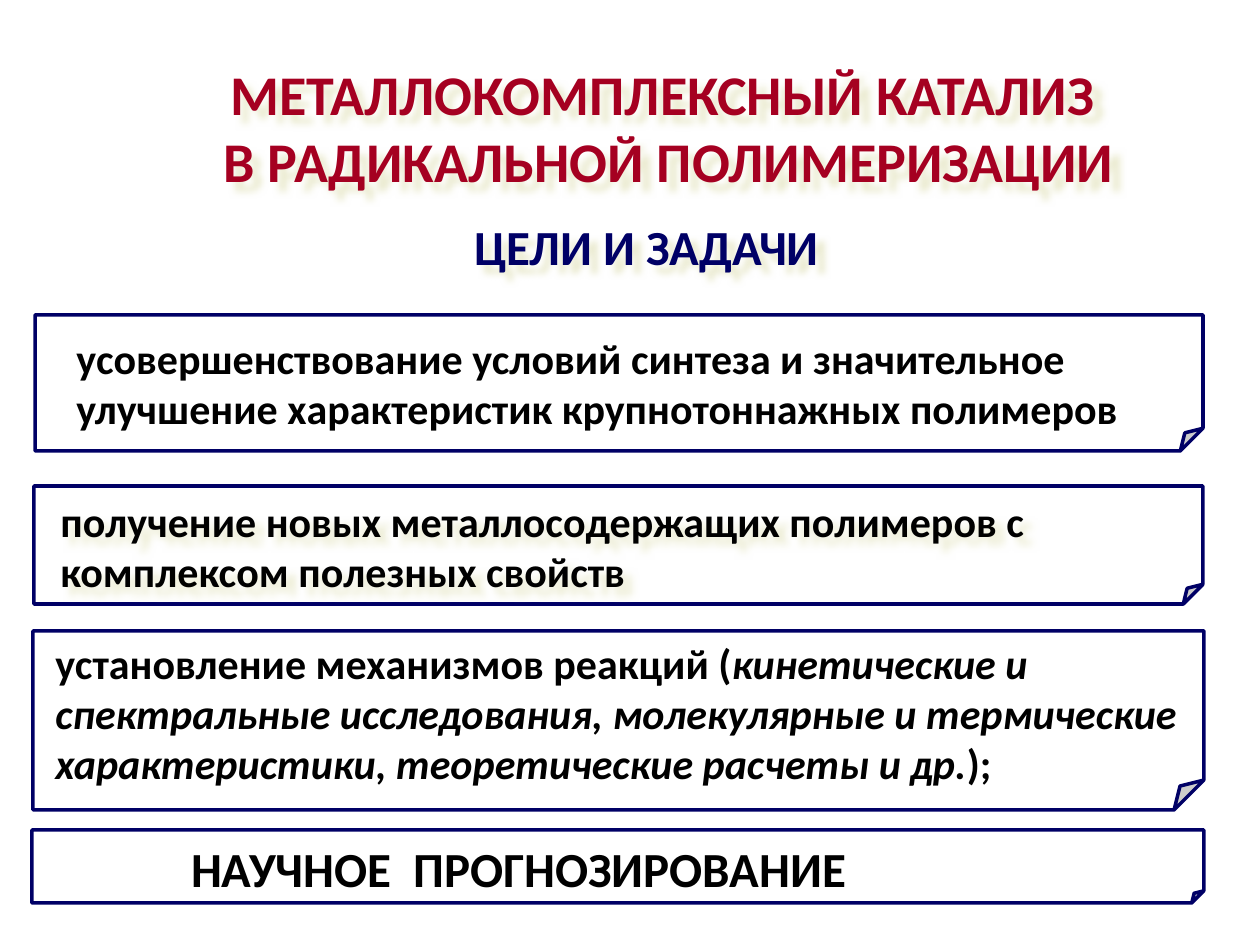
from dataclasses import dataclass

from lxml.etree import SubElement
from pptx import Presentation
from pptx.dml.color import RGBColor
from pptx.enum.shapes import MSO_SHAPE
from pptx.enum.text import MSO_AUTO_SIZE, PP_ALIGN
from pptx.oxml.ns import qn
from pptx.util import Pt

EMU_PER_PX = 914400 / 126


@dataclass(frozen=True)
class Theme:
    """Colours, font and sizes of the slide."""

    font: str = "Calibri"
    title: str = "A50021"
    navy: str = "000066"
    text: str = "000000"
    paper: str = "FFFFFF"
    glow: str = "EBEBD0"
    title_size: int = 32
    heading_size: int = 28
    body_size: int = 24
    line_width: int = 2


THEME = Theme()


def px(length):
    """Turn px into EMU."""
    return round(length * EMU_PER_PX)


def place(box):
    """Turn a px box into EMU left, top, width and height."""
    return [px(length) for length in box]


def add_soft_shadow(shape):
    """Give the text of an unfilled box a pale blurred shadow."""
    effects = SubElement(shape._element.spPr, qn("a:effectLst"))
    shadow = SubElement(effects, qn("a:outerShdw"), blurRad="50800",
                        dist="76200", dir="2700000", algn="tl", rotWithShape="0")
    SubElement(shadow, qn("a:srgbClr"), val=THEME.glow)


def add_text(shapes, box, paragraphs, size, color, align=PP_ALIGN.LEFT,
             indent=0, space_after=0, wrap=True, shadow=False):
    """Add a text box whose paragraphs are lists of (text, italic) runs."""
    shape = shapes.add_textbox(*place(box))
    frame = shape.text_frame
    frame.word_wrap = wrap
    frame.auto_size = MSO_AUTO_SIZE.SHAPE_TO_FIT_TEXT
    for index, runs in enumerate(paragraphs):
        paragraph = frame.add_paragraph() if index else frame.paragraphs[0]
        paragraph.alignment = align
        paragraph.space_after = Pt(space_after)
        properties = paragraph._p.get_or_add_pPr()
        properties.set("marL", str(px(indent)))
        properties.set("indent", "0")
        for text, italic in runs:
            run = paragraph.add_run()
            run.text = text
            run.font.name = THEME.font
            run.font.size = Pt(size)
            run.font.bold = True
            run.font.italic = italic
            run.font.color.rgb = RGBColor.from_string(color)
    if shadow:
        add_soft_shadow(shape)


def add_note(slide, note_box, text_box, runs, size=THEME.body_size, **options):
    """Add a group of a sheet with a folded corner and its text."""
    group = slide.shapes.add_group_shape()
    sheet = group.shapes.add_shape(MSO_SHAPE.FOLDED_CORNER, *place(note_box))
    sheet.shadow.inherit = False
    sheet.fill.solid()
    sheet.fill.fore_color.rgb = RGBColor.from_string(THEME.paper)
    sheet.line.color.rgb = RGBColor.from_string(THEME.navy)
    sheet.line.width = Pt(THEME.line_width)
    add_text(group.shapes, text_box, [runs], size, THEME.text, indent=24, **options)


def main():
    """Build and save the slide."""
    presentation = Presentation()
    presentation.slide_width, presentation.slide_height = px(1260), px(945)
    slide = presentation.slides.add_slide(presentation.slide_layouts[6])

    add_text(slide.shapes, (207, 53, 924, 149),
             [[("МЕТАЛЛОКОМПЛЕКСНЫЙ КАТАЛИЗ ", False)],
              [("В РАДИКАЛЬНОЙ ПОЛИМЕРИЗАЦИИ", False)]],
             THEME.title_size, THEME.title, PP_ALIGN.CENTER, wrap=False, shadow=True)
    add_text(slide.shapes, (462, 210, 374, 72), [[("ЦЕЛИ И ЗАДАЧИ", False)]],
             THEME.heading_size, THEME.navy, wrap=False, shadow=True)

    add_note(slide, (35, 315, 1168, 136), (40, 326, 1154, 115),
             [("усовершенствование условий синтеза и значительное улучшение "
               "характеристик крупнотоннажных полимеров", False)], space_after=5)
    add_note(slide, (34, 486, 1169, 118), (24, 489, 1250, 136),
             [("получение новых металлосодержащих полимеров с комплексом "
               "полезных свойств", False)], space_after=5, shadow=True)
    add_note(slide, (33, 631, 1171, 179), (19, 631, 1210, 165),
             [("установление механизмов реакций (", False),
              ("кинетические и спектральные исследования, молекулярные и "
               "термические характеристики, теоретические расчеты и др.", True),
              (");", False)], space_after=5)
    add_note(slide, (32, 830, 1172, 73), (63, 832, 887, 72),
             [("НАУЧНОЕ  ПРОГНОЗИРОВАНИЕ", False)], THEME.heading_size,
             align=PP_ALIGN.CENTER, space_after=6)

    presentation.save("out.pptx")


if __name__ == "__main__":
    main()
